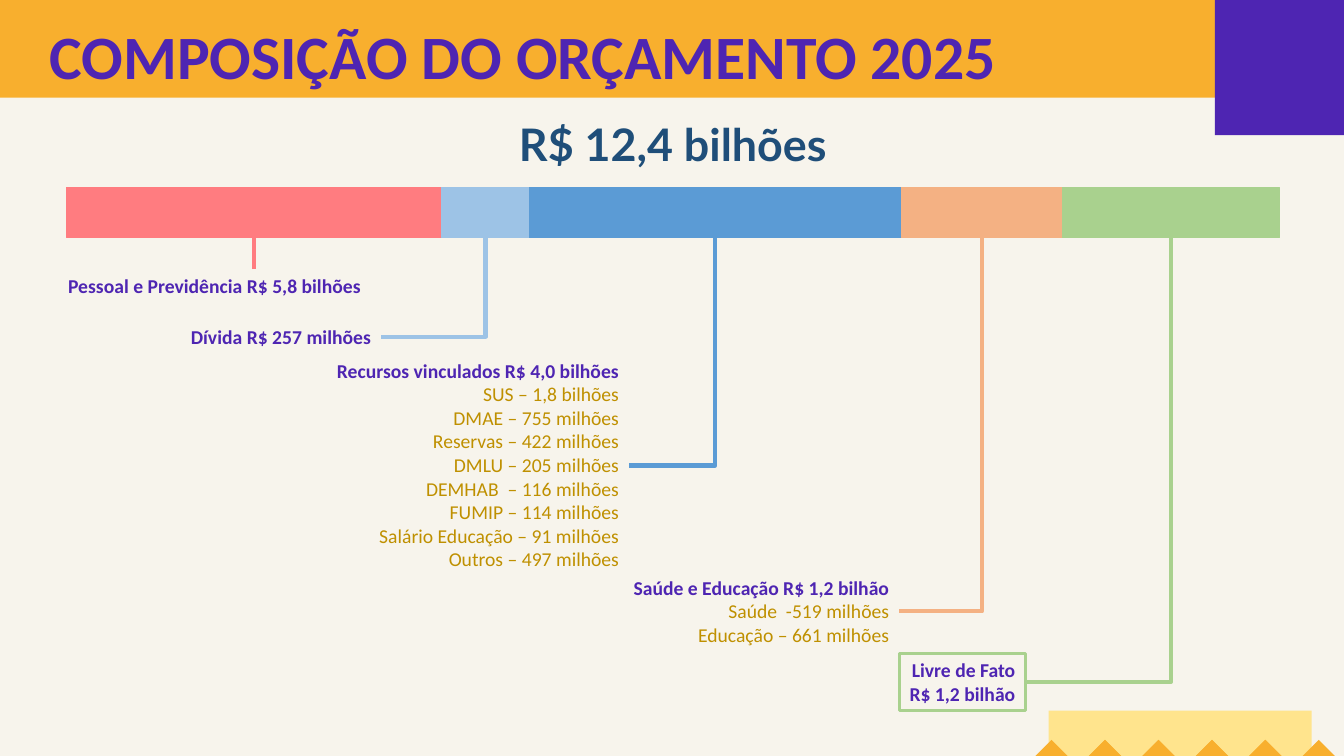
from lxml import etree
from pptx import Presentation
from pptx.dml.color import RGBColor
from pptx.enum.shapes import MSO_CONNECTOR, MSO_SHAPE
from pptx.enum.text import MSO_ANCHOR, MSO_AUTO_SIZE, PP_ALIGN
from pptx.oxml.ns import qn
from pptx.util import Inches, Pt

CREAM = RGBColor(0xF7, 0xF4, 0xEC)
YELLOW = RGBColor(0xFF, 0xE4, 0x8D)
ORANGE = RGBColor(0xF8, 0xAF, 0x2E)
PURPLE = RGBColor(0x4E, 0x25, 0xB2)
NAVY = RGBColor(0x1F, 0x4E, 0x79)
GOLD = RGBColor(0xBF, 0x90, 0x00)
RED = RGBColor(0xFF, 0x7C, 0x80)
LIGHT_BLUE = RGBColor(0x9D, 0xC3, 0xE6)
BLUE = RGBColor(0x5B, 0x9B, 0xD5)
PEACH = RGBColor(0xF4, 0xB1, 0x83)
GREEN = RGBColor(0xA9, 0xD1, 0x8E)

BAR_LEFT, BAR_TOP, BAR_HEIGHT = 0.66, 1.86, 0.5
TOOTH_LEFT, TOOTH_TOP, TOOTH_STEP, TOOTH_SIZE = 10.32, 7.23, 0.53, 0.75

SECTIONS = [
    (3.72, RED, (0.53, 2.67, 3.15, 0.34),
     ["Pessoal e Previdência R$ 5,8 bilhões"], []),
    (0.87, LIGHT_BLUE, (1.77, 3.17, 2.01, 0.34),
     ["Dívida R$ 257 milhões"], []),
    (3.69, BLUE, (2.6, 3.51, 3.64, 2.22),
     ["Recursos vinculados R$ 4,0 bilhões"],
     ["SUS – 1,8 bilhões", "DMAE – 755 milhões", "Reservas – 422 milhões",
      "DMLU – 205 milhões", "DEMHAB  – 116 milhões", "FUMIP – 114 milhões",
      "Salário Educação – 91 milhões", "Outros – 497 milhões"]),
    (1.6, PEACH, (3.42, 5.66, 5.5, 0.81),
     ["Saúde e Educação R$ 1,2 bilhão"],
     ["Saúde  -519 milhões", "Educação – 661 milhões"]),
    (2.15, GREEN, (8.92, 6.48, 1.25, 0.57),
     ["Livre de Fato", "R$ 1,2 bilhão"], []),
]


def set_preset(sp, name):
    sp._element.spPr.find(qn("a:prstGeom")).set("prst", name)


def add_block(slide, box, fill=None, line=None, width=1):
    sp = slide.shapes.add_shape(MSO_SHAPE.RECTANGLE, *map(Inches, box))
    sp.shadow.inherit = False
    if fill is None:
        sp.fill.background()
    else:
        sp.fill.solid()
        sp.fill.fore_color.rgb = fill
    if line is None:
        sp.line.fill.background()
    else:
        sp.line.color.rgb = line
        sp.line.width = Pt(width)
    return sp


def write_text(sp, text, size=14, font="Calibri", color=PURPLE, bold=True,
               align=PP_ALIGN.RIGHT, anchor=MSO_ANCHOR.TOP, new=True):
    tf = sp.text_frame
    tf.word_wrap = True
    tf.auto_size = MSO_AUTO_SIZE.NONE
    tf.vertical_anchor = anchor
    p = tf.paragraphs[0] if new else tf.add_paragraph()
    p.alignment = align
    r = p.add_run()
    r.text = text
    r.font.size = Pt(size)
    r.font.name = font
    r.font.bold = bold
    r.font.color.rgb = color


def add_title(slide, text):
    sp = slide.shapes.title
    sp.left, sp.top, sp.width, sp.height = map(Inches, (0.39, 0.13, 11.56, 0.84))
    slide.shapes._spTree.append(sp._element)
    write_text(sp, text, size=44, align=PP_ALIGN.LEFT)


def add_total(slide, text):
    sp = slide.shapes.add_textbox(*map(Inches, (0.66, 1.1, 12.03, 0.65)))
    write_text(sp, text, size=32, font="Lato", color=NAVY, align=PP_ALIGN.CENTER,
               anchor=MSO_ANCHOR.MIDDLE)


def add_label(slide, box, heads, items, border=None):
    if border is None:
        sp = slide.shapes.add_textbox(*map(Inches, box))
    else:
        sp = add_block(slide, box, line=border, width=2)
    for i, head in enumerate(heads):
        write_text(sp, head, new=i == 0)
    for item in items:
        write_text(sp, item, color=GOLD, bold=False, new=False)
    return sp


def add_link(slide, label, bar, color):
    bar_middle = bar.left + bar.width // 2
    label_right = label.left + label.width
    straight = label_right > bar_middle
    kind = MSO_CONNECTOR.STRAIGHT if straight else MSO_CONNECTOR.ELBOW
    start = (bar_middle, label.top) if straight else (
        label_right, label.top + label.height // 2)
    cxn = slide.shapes.add_connector(kind, *start, bar_middle, bar.top + bar.height)
    cxn.end_connect(bar, 2)
    if not straight:
        cxn.begin_connect(label, 3)
        set_preset(cxn, "bentConnector2")
    cxn.line.color.rgb = color
    cxn.line.width = Pt(3)
    etree.SubElement(cxn._element.spPr, qn("a:effectLst"))


def add_frame(slide):
    add_block(slide, (10.4, 7.05, 2.61, 1.31), YELLOW)
    add_block(slide, (0, 0, 13.33, 0.97), ORANGE)
    add_block(slide, (12.05, 0, 1.28, 1.34), PURPLE)
    for i in range(5):
        box = (TOOTH_LEFT + i * TOOTH_STEP, TOOTH_TOP, TOOTH_SIZE, TOOTH_SIZE)
        tooth = add_block(slide, box, ORANGE)
        set_preset(tooth, "corner")
        tooth.rotation = 315


def add_sections(slide):
    left = BAR_LEFT
    for width, color, box, heads, items in SECTIONS:
        bar = add_block(slide, (left, BAR_TOP, width, BAR_HEIGHT), color, color)
        border = GREEN if color == GREEN else None
        label = add_label(slide, box, heads, items, border)
        add_link(slide, label, bar, color)
        left += width


def main():
    prs = Presentation()
    prs.slide_width, prs.slide_height = Inches(13.33), Inches(7.5)
    slide = prs.slides.add_slide(prs.slide_layouts[5])
    slide.background.fill.solid()
    slide.background.fill.fore_color.rgb = CREAM
    add_frame(slide)
    add_title(slide, "COMPOSIÇÃO DO ORÇAMENTO 2025")
    add_total(slide, "R$ 12,4 bilhões")
    add_sections(slide)
    prs.save("out.pptx")


if __name__ == "__main__":
    main()
